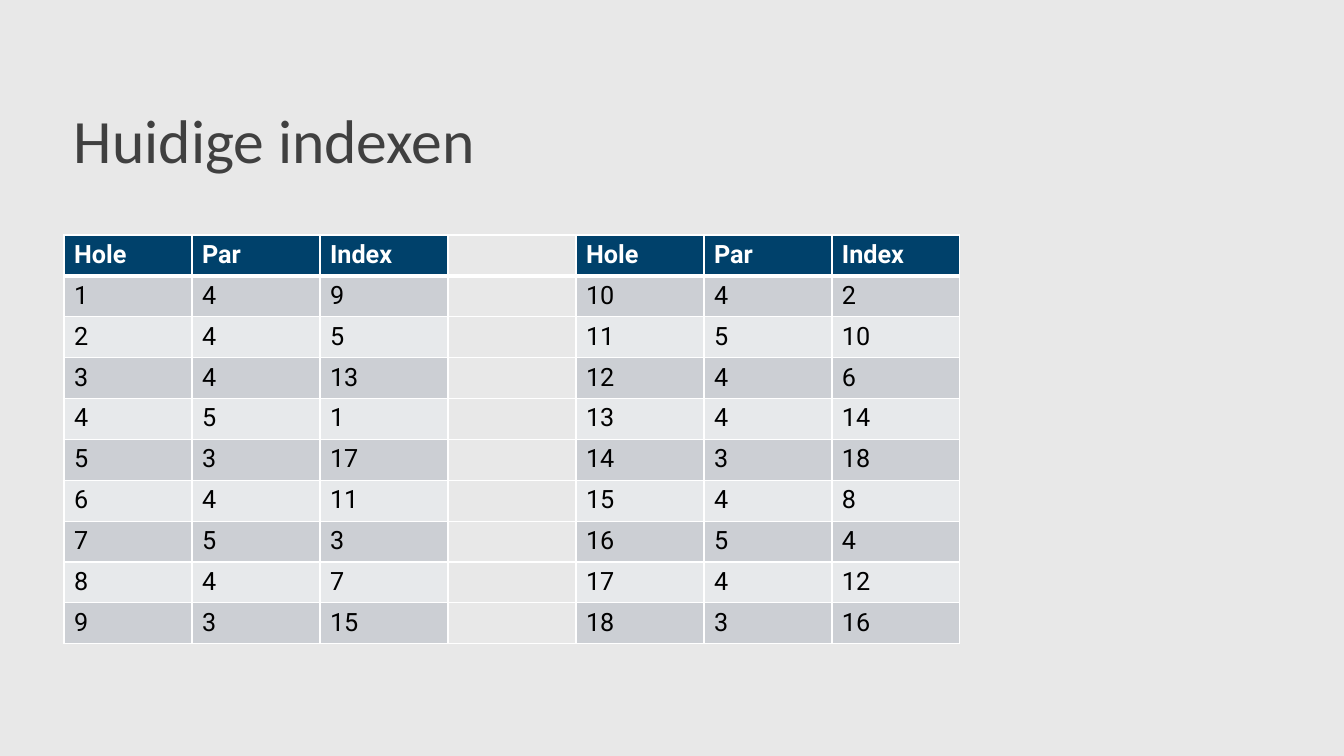
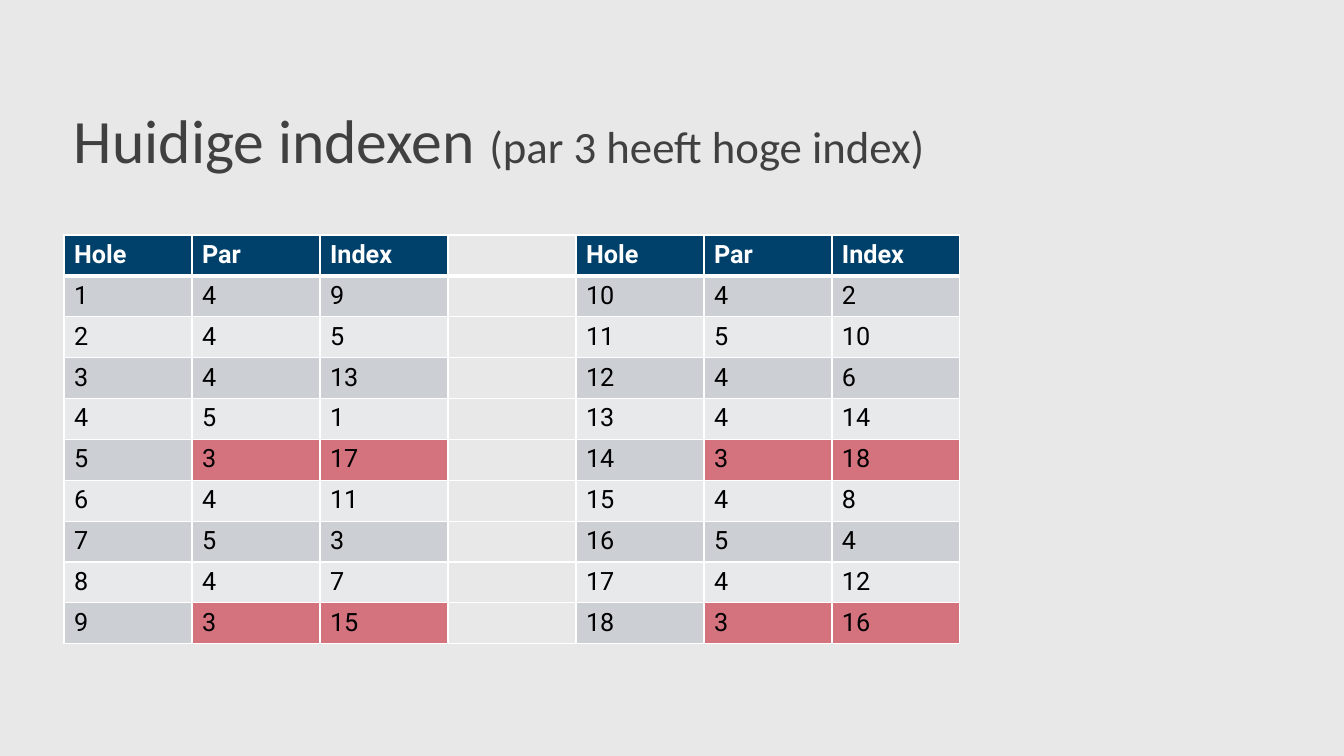
from lxml.etree import SubElement
from pptx import Presentation
from pptx.dml.color import RGBColor
from pptx.enum.text import MSO_ANCHOR
from pptx.oxml.ns import qn
from pptx.util import Emu, Pt

SCALE = 914400 / 100.8  # EMU per px
COLORS = {
    "background": "E8E8E8",
    "title": "404040",
    "header": "00416B",
    "header_text": "FFFFFF",
    "text": "000000",
    "odd_row": "CCCFD4",
    "even_row": "E7E9EB",
    "par_three": "D4727E",
    "border": "FFFFFF",
}
TITLE_FONT, TABLE_FONT = "Calibri", "Roboto"
TITLE_BOX = (64, 65, 896, 158)
TABLE_BOX = (64, 235, 896, 409)

HEADINGS = ["Hole", "Par", "Index"]
PARS = [4, 4, 4, 5, 3, 4, 5, 4, 3, 4, 5, 4, 4, 3, 4, 5, 4, 3]
INDEXES = [9, 5, 13, 1, 17, 11, 3, 7, 15, 2, 10, 6, 14, 18, 8, 4, 12, 16]
HOLES = list(zip(range(1, 19), PARS, INDEXES))
NINE = 9
GAP_COLUMN = len(HEADINGS)


def px(length):
    return Emu(round(length * SCALE))


def rgb(name):
    return RGBColor.from_string(COLORS[name])


def add_text(paragraph, text, *, size=18, font=TABLE_FONT, color="text", bold=False):
    run = paragraph.add_run()
    run.text = text
    run.font.size = Pt(size)
    run.font.name = font
    run.font.bold = bold
    run.font.color.rgb = rgb(color)


def add_title(slide, box, title, remark):
    frame = slide.shapes.add_textbox(*map(px, box)).text_frame
    frame.word_wrap = True
    frame.vertical_anchor = MSO_ANCHOR.MIDDLE
    line = frame.paragraphs[0]
    line.line_spacing = 0.9
    style = {"font": TITLE_FONT, "color": "title"}
    if remark:
        add_text(line, f"{title} ", size=44, **style)
        add_text(line, remark, size=32, **style)
    else:
        add_text(line, title, size=44, **style)


def set_borders(cell, **widths):
    properties = cell._tc.get_or_add_tcPr()
    for side in ("L", "R", "T", "B"):
        border = SubElement(properties, qn(f"a:ln{side}"), w=str(Pt(widths.get(side, 1))))
        fill = SubElement(border, qn("a:solidFill"))
        SubElement(fill, qn("a:srgbClr"), val=COLORS["border"])


def fill_cell(cell, text, fill, **style):
    cell.fill.solid()
    cell.fill.fore_color.rgb = rgb(fill)
    add_text(cell.text_frame.paragraphs[0], str(text), **style)


def add_index_table(slide, box, mark_par_three):
    table = slide.shapes.add_table(NINE + 1, 2 * GAP_COLUMN + 1, *map(px, box)).table
    table.horz_banding = False

    # Borders, with a heavy rule below the headings
    for row_number, row in enumerate(table.rows):
        heavy = {0: {"B": 3}, 1: {"T": 3}}.get(row_number, {})
        for cell in row.cells:
            set_borders(cell, **heavy)
        row.cells[GAP_COLUMN].fill.background()

    # Front nine on the left, back nine on the right
    for first_column, first_hole in ((0, 0), (GAP_COLUMN + 1, NINE)):
        for column, heading in enumerate(HEADINGS, first_column):
            fill_cell(table.cell(0, column), heading, "header", color="header_text", bold=True)
        for row, hole in enumerate(HOLES[first_hole:first_hole + NINE], 1):
            band = "odd_row" if row % 2 else "even_row"
            marked = mark_par_three and hole[1] == 3
            for offset, value in enumerate(hole):
                fill = "par_three" if marked and offset else band
                fill_cell(table.cell(row, first_column + offset), value, fill)


def add_index_slide(prs, title, remark="", mark_par_three=False):
    slide = prs.slides.add_slide(prs.slide_layouts[6])
    add_title(slide, TITLE_BOX, title, remark)
    add_index_table(slide, TABLE_BOX, mark_par_three)


def main():
    prs = Presentation()
    prs.slide_width, prs.slide_height = px(1344), px(756)
    background = prs.slide_master.background.fill
    background.solid()
    background.fore_color.rgb = rgb("background")

    add_index_slide(prs, "Huidige indexen")
    add_index_slide(prs, "Huidige indexen", "(par 3 heeft hoge index)", mark_par_three=True)
    prs.save("out.pptx")


if __name__ == "__main__":
    main()
